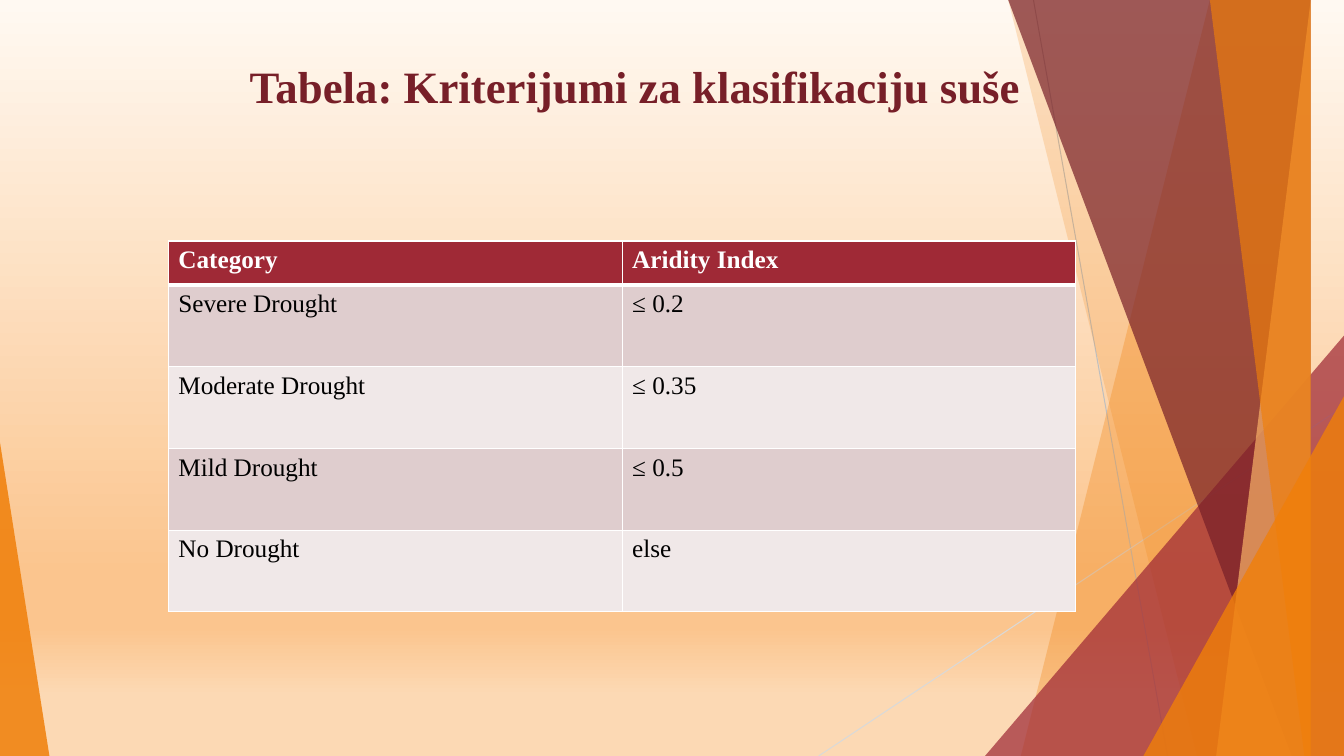
from lxml import etree
from pptx import Presentation, util as u
from pptx.dml.color import RGBColor
from pptx.enum import shapes, text
from pptx.oxml.ns import qn

C = {"orange": "F07F09", "peach": "F9B268", "red": "9F2936", "wine": "771F28",
     "white": "FFFFFF", "black": "000000", "band": "DFCDCE", "pale": "F0E8E8",
     "gray": "BFBFBF", "silver": "D9D9D9"}
W, H = 13.33, 7.5
FONT = "Times New Roman"

prs = Presentation()
prs.slide_width, prs.slide_height = u.Inches(W), u.Inches(H)
s = prs.slides.add_slide(prs.slide_layouts[5])


def write(tf, txt, size=18, color="black", bold=False, align=text.PP_ALIGN.LEFT):
    p = tf.paragraphs[0]
    p.alignment = align
    r = p.add_run()
    r.text = txt
    r.font.name, r.font.size, r.font.bold = FONT, u.Pt(size), bold
    r.font.color.rgb = RGBColor.from_string(C[color])


def solid(parent, color, alpha=100):
    fill = etree.SubElement(parent, qn("a:solidFill"))
    clr = etree.SubElement(fill, qn("a:srgbClr"), val=color)
    etree.SubElement(clr, qn("a:alpha"), val=str(alpha * 1000))


bg = s.background.fill
bg.gradient()
bg.gradient_angle = 270
stops = s._element.find(".//" + qn("a:gsLst"))
for gs in list(stops):
    stops.remove(gs)
for pos, color in [(0, "FFF9F2"), (76, "FBC58E"), (83, "FBC58E"), (92, "FCD9B4")]:
    gs = etree.SubElement(stops, qn("a:gs"), pos=str(pos * 1000))
    etree.SubElement(gs, qn("a:srgbClr"), val=color)

for x1, y1, x2, y2, color in [(10.25, 0, 11.58, H, "gray"), (W, 4.03, 8.12, H, "silver")]:
    ln = s.shapes.add_connector(shapes.MSO_CONNECTOR.STRAIGHT,
                                *[u.Inches(v) for v in (x1, y1, x2, y2)])
    ln.line.width = u.Pt(0.75)
    ln.line.color.rgb = RGBColor.from_string(C[color])
    etree.SubElement(ln._element.spPr, qn("a:effectLst"))

facets = [
    ("band", 12.28, 10.04, "orange", 30),
    ("band", 10.5, 11.83, "orange", 20),
    ("right", 3.56, 4.17, "red", 72),
    ("band", 10.21, 12.91, "wine", 70),
    ("band", 13.03, 11.92, "peach", 70),
    ("band", 11.96, 13.18, "orange", 65),
    ("right", 1.99, 3.57, "orange", 80),
    ("left", 0.49, 3.11, "orange", 85),
]
for kind, a, b, color, alpha in facets:
    if kind == "band":
        fb = s.shapes.build_freeform(a, 0, scale=u.Inches(1))
        fb.add_line_segments([(W, 0), (W, H), (b, H)], close=True)
        sp = fb.convert_to_shape()
    else:
        left = W - a if kind == "right" else 0
        sp = s.shapes.add_shape(shapes.MSO_SHAPE.ISOSCELES_TRIANGLE,
                                *[u.Inches(v) for v in (left, H - b, a, b)])
        sp.adjustments[0] = 1 if kind == "right" else 0
    sp.shadow.inherit = False
    sp.line.fill.background()
    sp.fill.solid()
    sp.fill.fore_color.rgb = RGBColor.from_string(C[color])
    clr = sp._element.spPr.find(qn("a:solidFill")).find(qn("a:srgbClr"))
    etree.SubElement(clr, qn("a:alpha"), val=str(alpha * 1000))

title = s.shapes.title
title.left, title.top, title.width, title.height = [u.Inches(v) for v in (-0.27, 0.53, 13.14, 1.45)]
tf = title.text_frame
tf.word_wrap = True
tf.auto_size = text.MSO_AUTO_SIZE.NONE
tf.vertical_anchor = text.MSO_ANCHOR.TOP
write(tf, "Tabela: Kriterijumi za klasifikaciju suše", size=32, color="wine", bold=True,
      align=text.PP_ALIGN.CENTER)
s.shapes._spTree.append(title._element)

rows = [("Category", "Aridity Index"), ("Severe Drought", "≤ 0.2"),
        ("Moderate Drought", "≤ 0.35"), ("Mild Drought", "≤ 0.5"), ("No Drought", "else")]
heights = [0.44] + [0.81] * 4
table = s.shapes.add_table(len(rows), 2, *[u.Inches(v) for v in (1.67, 2.39, 9, sum(heights))]).table
for col in table.columns:
    col.width = u.Inches(4.5)
for i, row in enumerate(rows):
    table.rows[i].height = u.Inches(heights[i])
    head = i == 0
    for j, txt in enumerate(row):
        cell = table.cell(i, j)
        write(cell.text_frame, txt, color="white" if head else "black", bold=head)
        tcPr = cell._tc.get_or_add_tcPr()
        for side in "LRTB":
            thick = (head and side == "B") or (i == 1 and side == "T")
            ln = etree.SubElement(tcPr, qn("a:ln" + side), w=str(u.Pt(3 if thick else 1)))
            solid(ln, C["white"])
        cell.fill.solid()
        cell.fill.fore_color.rgb = RGBColor.from_string(
            C["red"] if head else C["band"] if i % 2 else C["pale"])

prs.save("out.pptx")
